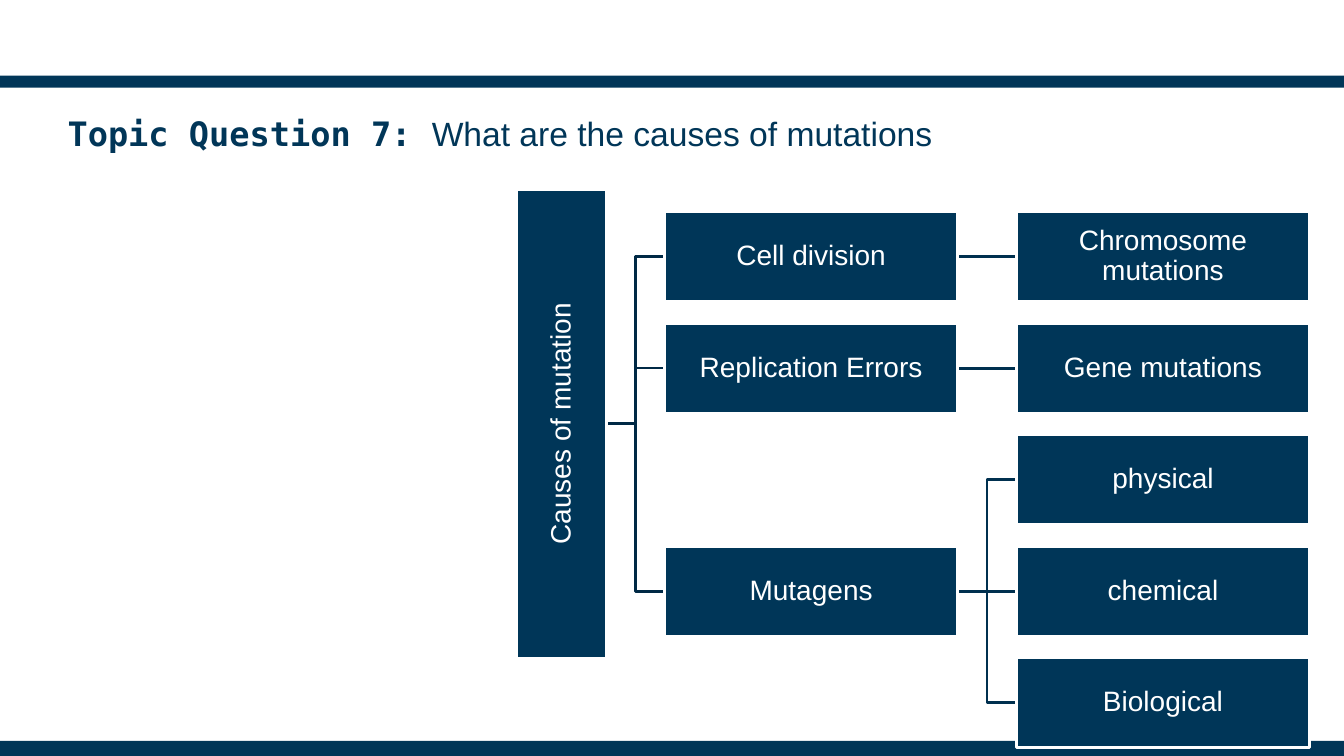
from lxml.etree import SubElement
from pptx import Presentation
from pptx.dml.color import RGBColor
from pptx.enum.shapes import MSO_CONNECTOR, MSO_SHAPE
from pptx.enum.text import MSO_ANCHOR, MSO_AUTO_SIZE, PP_ALIGN
from pptx.oxml.ns import qn
from pptx.util import Inches, Pt

BAR_BLUE = RGBColor(0x01, 0x36, 0x58)
BOX_BLUE = RGBColor(0x00, 0x36, 0x58)
ROOT_LINE = RGBColor(0x00, 0x29, 0x45)
BRANCH_LINE = RGBColor(0x00, 0x30, 0x4F)
WHITE = RGBColor(0xFF, 0xFF, 0xFF)

BOX_WIDTH, BOX_HEIGHT = 2.91, 0.89
ROOT_LENGTH, ROOT_CENTER = 4.66, 5.57
COLUMN_GAP = 0.58
CAUSE_LEFT = 6.59
RESULT_LEFT = CAUSE_LEFT + BOX_WIDTH + COLUMN_GAP
FIRST_MIDDLE, ROW_STEP = 2.545, 1.107

CAUSES = [
    ("Cell division", 0, [("Chromosome mutations", 0)]),
    ("Replication Errors", 1, [("Gene mutations", 1)]),
    ("Mutagens", 3, [("physical", 2), ("chemical", 3), ("Biological", 4)]),
]
ROOT_ROW = 1.5

deck = Presentation()
deck.slide_width, deck.slide_height = Inches(13.33), Inches(7.5)
page = deck.slides.add_slide(deck.slide_layouts[5])


def add_box(text, center, row, width):
    middle = FIRST_MIDDLE + row * ROW_STEP
    box = page.shapes.add_shape(
        MSO_SHAPE.RECTANGLE, Inches(center - width / 2), Inches(middle - BOX_HEIGHT / 2),
        Inches(width), Inches(BOX_HEIGHT))
    box.shadow.inherit = False
    box.fill.solid()
    box.fill.fore_color.rgb = BOX_BLUE
    box.line.color.rgb = WHITE
    box.line.width = Pt(2)
    frame = box.text_frame
    frame.text = text
    frame.word_wrap = True
    frame.vertical_anchor = MSO_ANCHOR.MIDDLE
    frame.margin_left = frame.margin_right = Inches(0.01)
    frame.margin_top = frame.margin_bottom = Inches(0.01)
    para = frame.paragraphs[0]
    para.alignment = PP_ALIGN.CENTER
    para.line_spacing = 0.9
    para.font.name = "Arial"
    para.font.size = Pt(20)
    para.font.color.rgb = WHITE
    return box


def add_link(right, from_row, to_row, color):
    kind = MSO_CONNECTOR.STRAIGHT if from_row == to_row else MSO_CONNECTOR.ELBOW
    link = page.shapes.add_connector(
        kind, Inches(right - COLUMN_GAP), Inches(FIRST_MIDDLE + from_row * ROW_STEP),
        Inches(right), Inches(FIRST_MIDDLE + to_row * ROW_STEP))
    link.line.color.rgb = color
    link.line.width = Pt(2)
    SubElement(link._element.spPr, qn("a:effectLst"))


for top, height in [(0.75, 0.12), (7.35, 0.15)]:
    bar = page.shapes.add_shape(
        MSO_SHAPE.RECTANGLE, 0, Inches(top), deck.slide_width, Inches(height))
    bar.shadow.inherit = False
    bar.fill.solid()
    bar.fill.fore_color.rgb = BAR_BLUE
    bar.line.fill.background()

title = page.shapes.title
title.left, title.top = Inches(0.67), Inches(1.12)
title.width, title.height = Inches(12), Inches(0.75)
frame = title.text_frame
frame.auto_size = MSO_AUTO_SIZE.NONE
frame.vertical_anchor = MSO_ANCHOR.TOP
frame.margin_left = frame.margin_right = frame.margin_top = frame.margin_bottom = 0
heading = frame.paragraphs[0]
heading.alignment = PP_ALIGN.LEFT
for text, font, bold in [("Topic Question 7: ", "DejaVu Sans Mono", True),
                         ("What are the causes of mutations", "Arial", False)]:
    span = heading.add_run()
    span.text = text
    span.font.name = font
    span.font.size = Pt(24)
    span.font.bold = bold
    span.font.color.rgb = BAR_BLUE

for cause, cause_row, results in CAUSES:
    add_link(CAUSE_LEFT, ROOT_ROW, cause_row, ROOT_LINE)
    for result, result_row in results:
        add_link(RESULT_LEFT, cause_row, result_row, BRANCH_LINE)

root = add_box("Causes of mutation", ROOT_CENTER, ROOT_ROW, ROOT_LENGTH)
root.rotation = 270
for cause, cause_row, results in CAUSES:
    add_box(cause, CAUSE_LEFT + BOX_WIDTH / 2, cause_row, BOX_WIDTH)
    for result, result_row in results:
        add_box(result, RESULT_LEFT + BOX_WIDTH / 2, result_row, BOX_WIDTH)

deck.save("out.pptx")
